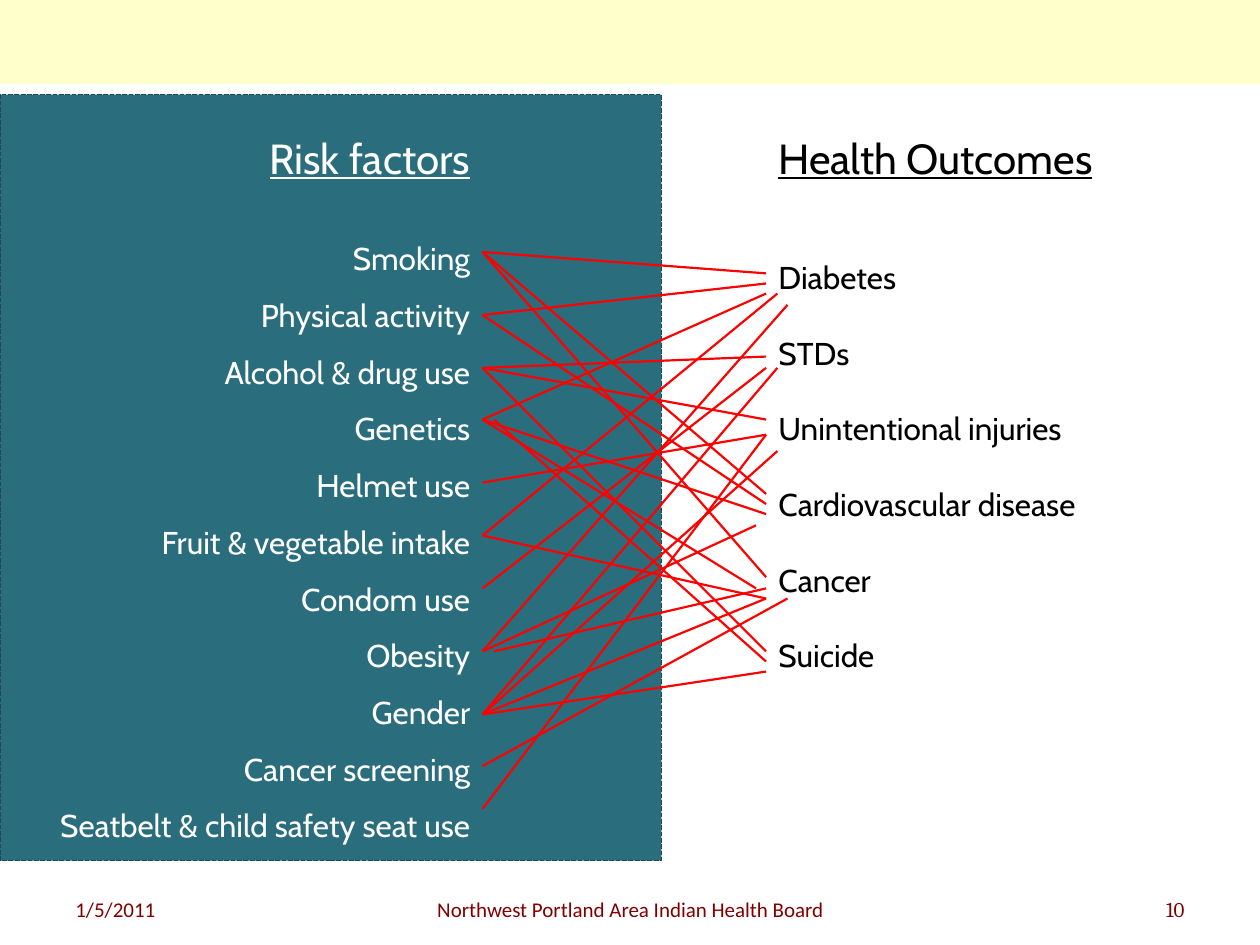
from pptx import Presentation
from pptx.dml.color import RGBColor
from pptx.enum.dml import MSO_LINE
from pptx.enum.shapes import MSO_CONNECTOR, MSO_SHAPE
from pptx.enum.text import PP_ALIGN
from pptx.oxml.ns import qn
from pptx.util import Inches, Pt
from lxml import etree

RECT = MSO_SHAPE.RECTANGLE
STRAIGHT = MSO_CONNECTOR.STRAIGHT
DASH = MSO_LINE.SQUARE_DOT
LEFT, CENTER, RIGHT = PP_ALIGN.LEFT, PP_ALIGN.CENTER, PP_ALIGN.RIGHT

COLORS = {
    "banner": "FFFFCC",
    "panel": "2A6D7D",
    "panel_edge": "1C4954",
    "footer": "800000",
    "risk": "FFFFFF",
    "outcome": "000000",
    "link": "FF0000",
}

RISK_FACTORS = [
    "Smoking", "Physical activity", "Alcohol & drug use", "Genetics",
    "Helmet use", "Fruit & vegetable intake", "Condom use", "Obesity",
    "Gender", "Cancer screening", "Seatbelt & child safety seat use",
]
OUTCOMES = [
    "Diabetes", "STDs", "Unintentional injuries",
    "Cardiovascular disease", "Cancer", "Suicide",
]

RISK_X, OUTCOME_X = 3.83, 6.08
LINKS = [
    ((RISK_X, 2), [(OUTCOME_X, 2.17), (OUTCOME_X, 3.92), (OUTCOME_X, 4.58)]),
    ((RISK_X, 2.5), [(OUTCOME_X, 4), (OUTCOME_X, 2.25)]),
    ((RISK_X, 2.92), [(OUTCOME_X, 2.83), (OUTCOME_X, 3.33), (OUTCOME_X, 5.17)]),
    ((RISK_X, 3.33), [(OUTCOME_X, 2.33), (OUTCOME_X, 4.08), (6, 4.67)]),
    ((3.92, 3.33), [(OUTCOME_X, 5.25)]),
    ((RISK_X, 3.83), [(OUTCOME_X, 3.45)]),
    ((RISK_X, 4.25), [(OUTCOME_X, 4.75), (6.17, 2.33)]),
    ((RISK_X, 4.67), [(OUTCOME_X, 2.92)]),
    ((RISK_X, 5.17), [(6.25, 2.42), (6, 4.17)]),
    ((3.92, 5.17), [(OUTCOME_X, 4.67)]),
    ((RISK_X, 5.67), [(6.17, 2.92), (OUTCOME_X, 5.33), (6.17, 3.58), (OUTCOME_X, 4.75)]),
    ((RISK_X, 6.08), [(6.25, 4.75)]),
    ((RISK_X, 6.42), [(OUTCOME_X, 3.45)]),
]


def color(name):
    return RGBColor.from_string(COLORS[name])


def add_rect(s, x, y, w, h, fill, edge=None):
    sp = s.shapes.add_shape(RECT, Inches(x), Inches(y), Inches(w), Inches(h))
    sp.shadow.inherit = False
    sp.fill.solid()
    sp.fill.fore_color.rgb = color(fill)
    if edge:
        sp.line.color.rgb = color(edge)
        sp.line.width = Pt(0.9)
        sp.line.dash_style = DASH
    else:
        sp.line.fill.background()


def add_textbox(s, x, y, w, h):
    tf = s.shapes.add_textbox(Inches(x), Inches(y), Inches(w), Inches(h)).text_frame
    tf.word_wrap = True
    return tf


def set_text(p, text, size, font, fill, align):
    p.text = text
    p.alignment = align
    p.font.size = Pt(size)
    p.font.name = font
    p.font.color.rgb = color(fill)


def add_footer(s, x, w, text, font, align):
    tf = add_textbox(s, x, 7.07, w, 0.43)
    set_text(tf.paragraphs[0], text, 12, font, "footer", align)


def add_list(s, box, heading, items, fill, align, first_gap, gap, spacing):
    tf = add_textbox(s, *box)
    p = tf.paragraphs[0]
    set_text(p, heading, 24, "Cabin", fill, align)
    p.font.underline = True
    for i, item in enumerate(items):
        p = tf.add_paragraph()
        set_text(p, item, 18, "Cabin", fill, align)
        p.line_spacing = spacing
        p.space_before = Pt(gap if i else first_gap)


def add_link(s, start, end):
    x1, y1, x2, y2 = (Inches(v) for v in (*start, *end))
    line = s.shapes.add_connector(STRAIGHT, x1, y1, x2, y2)
    line.line.color.rgb = color("link")
    line.line.width = Pt(1.25)
    etree.SubElement(line._element.spPr, qn("a:effectLst"))


def main():
    prs = Presentation()
    prs.slide_width, prs.slide_height = Inches(10), Inches(7.5)
    s = prs.slides.add_slide(prs.slide_layouts[6])

    add_rect(s, 0, 0, 10, 0.67, "banner")
    add_footer(s, 2.92, 4.17, "Northwest Portland Area Indian Health Board", "Calibri", CENTER)
    add_footer(s, 0.5, 2.33, "1/5/2011", "Calibri", LEFT)
    add_footer(s, 7.17, 2.33, "10", "Cambria", RIGHT)
    add_rect(s, 0, 0.75, 5.25, 6.08, "panel", "panel_edge")

    add_list(s, (-1, 1, 4.83, 5.81), "Risk factors", RISK_FACTORS,
             "risk", RIGHT, 21.6, 0, 1.5)
    add_list(s, (6.08, 1, 4.17, 4.9), "Health Outcomes", OUTCOMES,
             "outcome", LEFT, 43.2, 21.6, 1.0)

    for start, ends in LINKS:
        for end in ends:
            add_link(s, start, end)

    prs.save("out.pptx")


if __name__ == "__main__":
    main()
